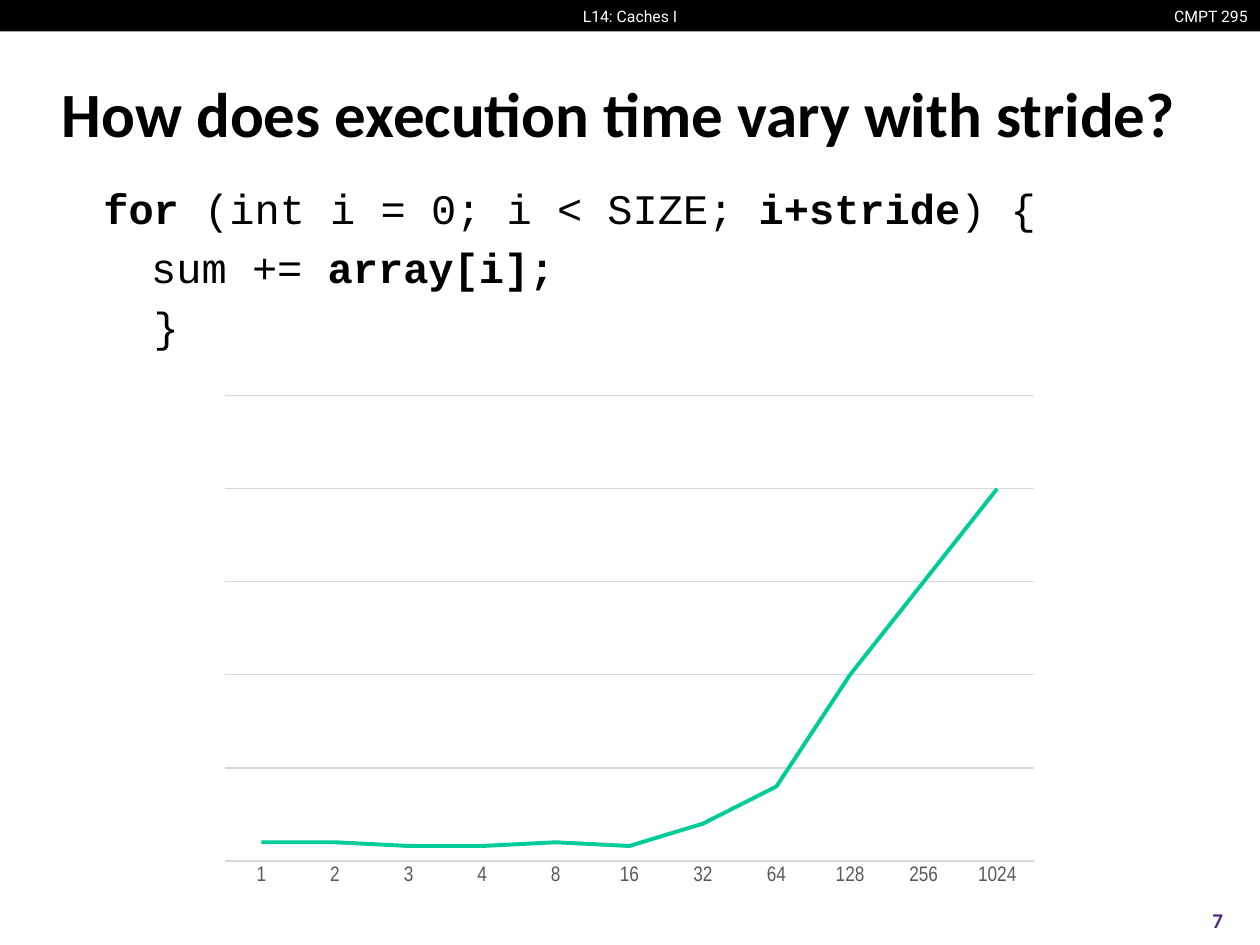
from dataclasses import dataclass

from pptx import Presentation
from pptx.chart.data import CategoryChartData
from pptx.dml.color import RGBColor
from pptx.enum.chart import XL_CHART_TYPE, XL_TICK_MARK
from pptx.enum.shapes import MSO_SHAPE
from pptx.enum.text import MSO_ANCHOR, MSO_AUTO_SIZE, PP_ALIGN
from pptx.oxml import parse_xml
from pptx.oxml.ns import nsdecls
from pptx.util import Inches, Pt


@dataclass(frozen=True)
class Theme:
    black: RGBColor = RGBColor(0x00, 0x00, 0x00)
    white: RGBColor = RGBColor(0xFF, 0xFF, 0xFF)
    purple: RGBColor = RGBColor(0x4B, 0x2A, 0x85)
    green: RGBColor = RGBColor(0x00, 0xCC, 0x99)
    grid: RGBColor = RGBColor(0xD9, 0xD9, 0xD9)
    axis_text: RGBColor = RGBColor(0x59, 0x59, 0x59)
    title_size: Pt = Pt(36)
    code_size: Pt = Pt(24)
    label_size: Pt = Pt(12)
    chart_size: Pt = Pt(10)
    header_size: Pt = Pt(9)


theme = Theme()


def add_run(paragraph, text, font_name, size, color, bold=False):
    run = paragraph.add_run()
    run.text = text
    run.font.name = font_name
    run.font.size = size
    run.font.bold = bold
    run.font.color.rgb = color


def place(part, left, top, width, height):
    part.left, part.top = Inches(left), Inches(top)
    part.width, part.height = Inches(width), Inches(height)


prs = Presentation()
prs.slide_width, prs.slide_height = Inches(10), Inches(7.5)
slide = prs.slides.add_slide(prs.slide_layouts[1])
title, code = slide.placeholders

# Header bar and small labels
header = slide.shapes.add_shape(MSO_SHAPE.RECTANGLE, 0, 0, Inches(10), Inches(0.25))
header.shadow.inherit = False
header.fill.solid()
header.fill.fore_color.rgb = theme.black
header.line.fill.background()

labels = [
    ("CMPT 295", (9.19, 0, 0.81, 0.25), PP_ALIGN.RIGHT, "Roboto", theme.header_size, theme.white, False),
    ("L14: Caches I", (4.51, 0, 0.98, 0.25), PP_ALIGN.CENTER, "Roboto", theme.header_size, theme.white, False),
    ("7", (9.33, 7.1, 0.67, 0.4), PP_ALIGN.CENTER, "Calibri", theme.label_size, theme.purple, True),
]
for text, box, align, font_name, size, color, bold in labels:
    label = slide.shapes.add_textbox(*map(Inches, box))
    label.text_frame.vertical_anchor = MSO_ANCHOR.MIDDLE
    label.text_frame.word_wrap = False
    paragraph = label.text_frame.paragraphs[0]
    paragraph.alignment = align
    add_run(paragraph, text, font_name, size, color, bold)

# Title
place(title, 0.39, 0.48, 9.19, 0.83)
title.text_frame.auto_size = MSO_AUTO_SIZE.NONE
title.text_frame.vertical_anchor = MSO_ANCHOR.MIDDLE
heading = title.text_frame.paragraphs[0]
heading.alignment = PP_ALIGN.LEFT
add_run(heading, "How does execution time vary with stride?", "Calibri", theme.title_size, theme.black, True)

# Loop code: left indent in inches, then (text, bold) runs
code_lines = [
    (0, [("for", True), (" (int i = 0; i < SIZE; ", False), ("i+stride", True), (") {", False)]),
    (0.38, [("sum += ", False), ("array[i];", True)]),
    (0.4, [("}", False)]),
]
place(code, 0.72, 1.4, 7.97, 1.57)
code.text_frame.auto_size = MSO_AUTO_SIZE.NONE
for number, (indent, runs) in enumerate(code_lines):
    line = code.text_frame.add_paragraph() if number else code.text_frame.paragraphs[0]
    properties = line._p.get_or_add_pPr()
    properties.set("marL", str(Inches(indent)))
    properties.set("indent", "0")
    properties.append(parse_xml(f"<a:buNone {nsdecls('a')}/>"))
    for text, bold in runs:
        add_run(line, text, "Courier New", theme.code_size, theme.black, bold)

# Execution time by stride
timings = CategoryChartData()
timings.categories = ["1", "2", "3", "4", "8", "16", "32", "64", "128", "256", "1024"]
timings.add_series("Series 1", [5, 5, 4, 4, 5, 4, 10, 20, 50, 75, 100])
chart = slide.shapes.add_chart(
    XL_CHART_TYPE.LINE, Inches(1.65), Inches(3.06), Inches(6.69), Inches(4.05), timings
).chart
chart.has_legend = False
chart.has_title = False
chart.font.name = "Arial Narrow"
chart.font.size = theme.chart_size
chart.font.color.rgb = theme.black
chart.plots[0].vary_by_categories = False

series = chart.plots[0].series[0]
series.smooth = False
series.format.line.color.rgb = theme.green
series.format.line.width = Pt(2.25)

stride_axis = chart.category_axis
stride_axis.major_tick_mark = XL_TICK_MARK.NONE
stride_axis.minor_tick_mark = XL_TICK_MARK.NONE
stride_axis.tick_labels.font.name = "Arial Narrow"
stride_axis.tick_labels.font.size = theme.label_size
stride_axis.tick_labels.font.color.rgb = theme.axis_text

time_axis = chart.value_axis
time_axis.visible = False
time_axis.minimum_scale, time_axis.maximum_scale = 0, 125
time_axis.major_unit = 25
time_axis.has_major_gridlines = True
for rule in (stride_axis.format.line, time_axis.major_gridlines.format.line):
    rule.color.rgb = theme.grid
    rule.width = Pt(0.75)

prs.save("out.pptx")
